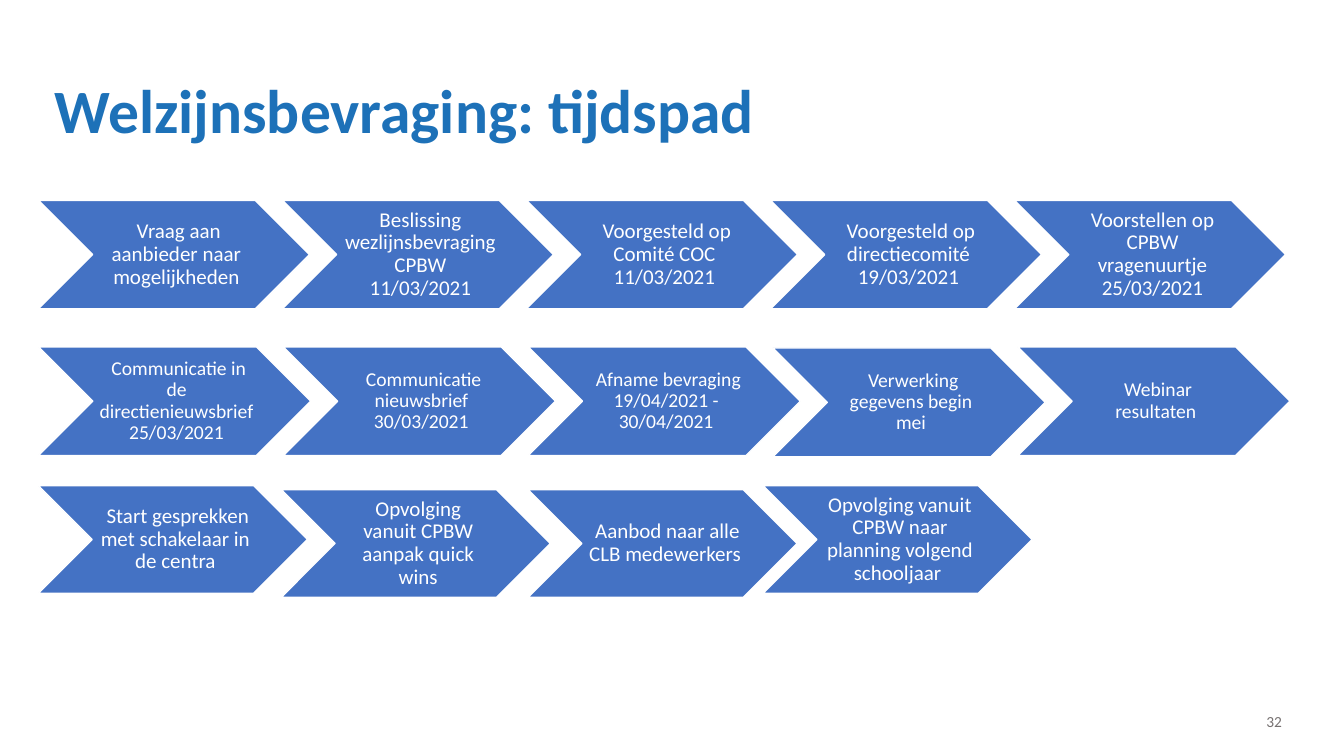
from pptx import Presentation
from pptx.dml.color import RGBColor
from pptx.enum.shapes import MSO_SHAPE
from pptx.enum.text import MSO_ANCHOR, PP_ALIGN
from pptx.util import Cm, Pt

TITLE_BLUE = RGBColor(0x1D, 0x71, 0xB8)
STEP_BLUE = RGBColor(0x44, 0x72, 0xC4)
WHITE = RGBColor(0xFF, 0xFF, 0xFF)
GREY = RGBColor(0x76, 0x71, 0x71)
LEFT = 0.97


def write(shape, text, size, color, align, spacing, bold=False):
    frame = shape.text_frame
    frame.word_wrap = True
    frame.vertical_anchor = MSO_ANCHOR.MIDDLE
    frame.text = text
    paragraph = frame.paragraphs[0]
    paragraph.alignment = align
    paragraph.line_spacing = spacing
    font = paragraph.runs[0].font
    font.name = "Calibri"
    font.size = Pt(size)
    font.bold = bold
    font.color.rgb = color


presentation = Presentation()
presentation.slide_width = Cm(33.87)
presentation.slide_height = Cm(19.05)
slide = presentation.slides.add_slide(presentation.slide_layouts[5])

title = slide.shapes.title
title.left, title.top, title.width, title.height = Cm(1.12), Cm(1.02), Cm(31.45), Cm(3.68)
write(title, "Welzijnsbevraging: tijdspad", 44, TITLE_BLUE, PP_ALIGN.LEFT, 0.9, True)

request_steps = [
    " Vraag aan aanbieder naar mogelijkheden",
    "Beslissing wezlijnsbevraging CPBW 11/03/2021",
    " Voorgesteld op Comité COC 11/03/2021",
    " Voorgesteld op directiecomité 19/03/2021",
    "Voorstellen op CPBW vragenuurtje 25/03/2021",
]
survey_steps = [
    " Communicatie in de directienieuwsbrief 25/03/2021",
    " Communicatie nieuwsbrief 30/03/2021",
    " Afname bevraging 19/04/2021 - 30/04/2021",
    " Verwerking gegevens begin mei",
    " Webinar resultaten",
]
follow_up_steps = [
    " Start gesprekken met schakelaar in de centra",
    " Opvolging  vanuit CPBW aanpak quick wins",
    " Aanbod naar alle CLB medewerkers",
    "Opvolging vanuit CPBW naar planning volgend schooljaar ",
]

rows = [
    (request_steps, [LEFT + 6.15 * i for i in range(5)], [5.05] * 5, 6.83, 2.73, 15, 0.18),
    (survey_steps, [LEFT + 6.17 * i for i in range(5)], [8.74, 8.74, 8.74, 8.77, 8.74], 6.86, 2.74, 14, 0.16),
    (follow_up_steps, [LEFT, 7.09, 13.31, 19.23], [12.24, 12.34, 12.34, 12.24], 6.78, 2.71, 15, 0.18),
]

for steps, lefts, tops, width, height, size, inset in rows:
    for step, left, top in zip(steps, lefts, tops):
        chevron = slide.shapes.add_shape(MSO_SHAPE.CHEVRON, Cm(left), Cm(top), Cm(width), Cm(height))
        chevron.shadow.inherit = False
        chevron.fill.solid()
        chevron.fill.fore_color.rgb = STEP_BLUE
        chevron.line.color.rgb = WHITE
        chevron.line.width = Pt(1)
        frame = chevron.text_frame
        frame.margin_left = Cm(inset)
        frame.margin_top = frame.margin_right = frame.margin_bottom = Cm(0.06)
        write(chevron, step, size, WHITE, PP_ALIGN.CENTER, 0.9)

page_number = slide.shapes.add_textbox(Cm(24.94), Cm(17.68), Cm(7.62), Cm(1.01))
write(page_number, "32", 11, GREY, PP_ALIGN.RIGHT, 1.0)

presentation.save("out.pptx")
